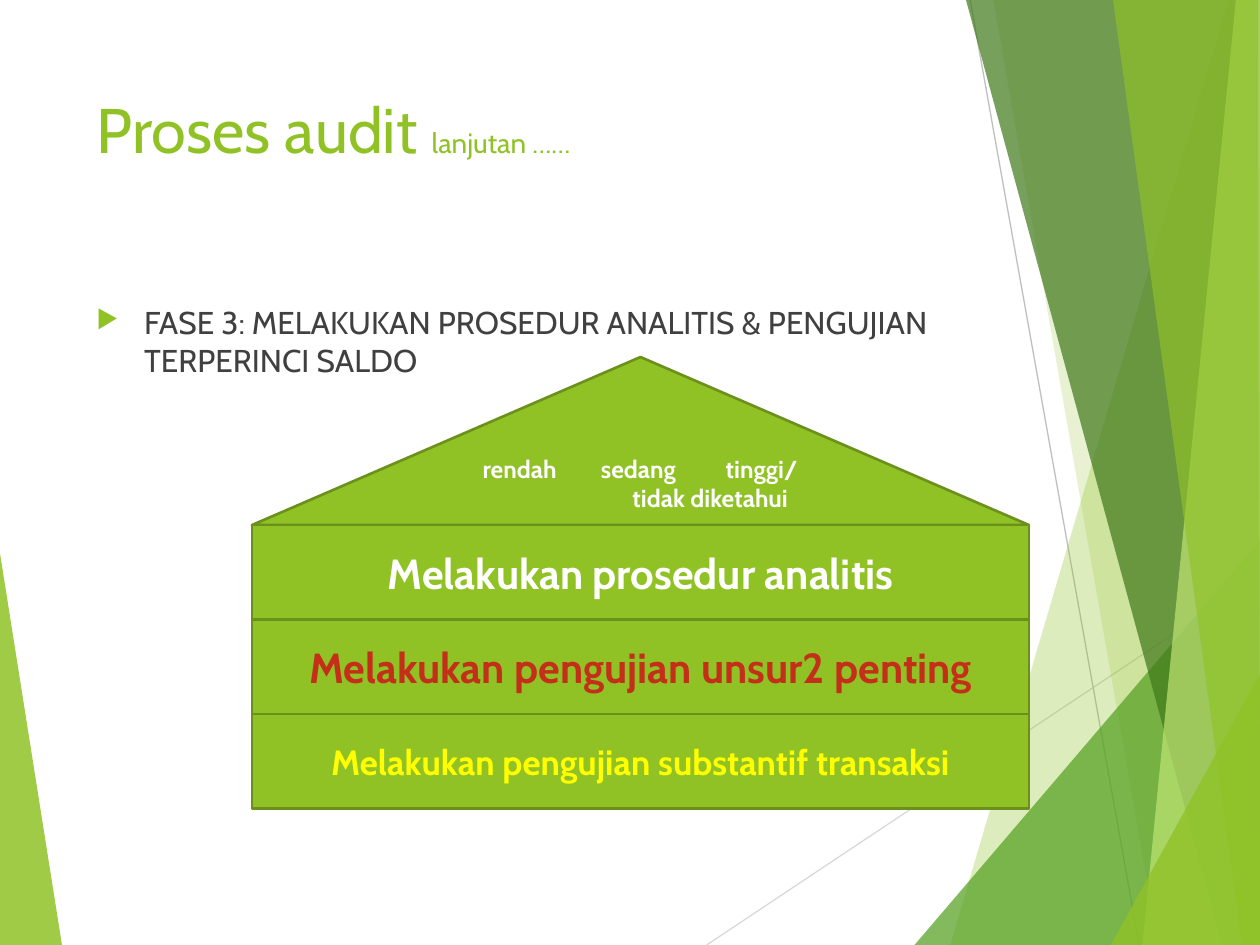
from collections import namedtuple

from lxml.etree import SubElement
from pptx import Presentation
from pptx.dml.color import RGBColor
from pptx.enum.shapes import MSO_CONNECTOR, MSO_SHAPE
from pptx.enum.text import MSO_ANCHOR, MSO_AUTO_SIZE, PP_ALIGN
from pptx.oxml.ns import qn
from pptx.util import Inches, Pt

Box = namedtuple("Box", "left top width height")

COLUMNS, ROWS = 120, 90
CELL = Inches(10) // COLUMNS
FONT = "Cabin"
LIME = RGBColor(0x90, 0xC2, 0x26)
OLIVE = RGBColor(0x6B, 0x90, 0x1C)
GREEN = RGBColor(0x54, 0xA0, 0x21)
FOREST = RGBColor(0x3F, 0x78, 0x19)
PALE = RGBColor(0xC0, 0xE4, 0x74)
GREY = RGBColor(0xBF, 0xBF, 0xBF)
SILVER = RGBColor(0xD9, 0xD9, 0xD9)
CHARCOAL = RGBColor(0x40, 0x40, 0x40)
WHITE = RGBColor(0xFF, 0xFF, 0xFF)
RED = RGBColor(0xC4, 0x2F, 0x1A)
YELLOW = RGBColor(0xFF, 0xFF, 0x00)

PAGE = Box(0, 0, COLUMNS, ROWS)
TITLE = Box(8, 8, 83.3, 17.3)
BODY = Box(8, 28.3, 83.3, 50.9)
HOUSE = Box(24, 34, 74, 43)

RAYS = [((67.3, 90), (120, 54.9), SILVER), ((92.4, 0), (108.5, 90), GREY)]
LEFT_FACET = ([(0, 52.7), (5.9, 90), (0, 90)], LIME, 85)
RIGHT_FACETS = [
    ([(117, 0), (90.5, 90), (120, 90), (120, 0)], LIME, 30),
    ([(94.6, 0), (110.3, 90), (120, 90), (120, 0)], LIME, 20),
    ([(87.1, 90), (120, 51.5), (120, 90)], GREEN, 72),
    ([(92, 0), (116.4, 90), (120, 90), (120, 0)], FOREST, 70),
    ([(117.7, 0), (108.8, 90), (120, 90), (120, 0)], PALE, 70),
    ([(106, 0), (118.3, 90), (120, 90), (119.8, 0)], LIME, 65),
    ([(105.8, 90), (120, 64.2), (120, 90)], LIME, 80),
]
FLOORS = [
    ("Melakukan prosedur analitis", 24, WHITE),
    ("Melakukan pengujian unsur2 penting", 24, RED),
    ("Melakukan pengujian substantif transaksi", 20, YELLOW),
]
ROOF_LINES = [
    ("\trendah\tsedang\ttinggi/", (0.19, 1.13, 2.12)),
    ("\ttidak diketahui", (1.38,)),
]


def cells(*counts):
    """Turn counts of grid cells into lengths."""
    return [round(count * CELL) for count in counts]


def add_span(para, text, size, color, bold=False):
    """Add one formatted run to a paragraph."""
    span = para.add_run()
    span.text = text
    span.font.name, span.font.size = FONT, Pt(size)
    span.font.bold, span.font.color.rgb = bold, color


def add_facet(page, box, points, color, opacity):
    """Draw one translucent polygon within the box."""
    corners = [cells(box.left + x, box.top + y) for x, y in points]
    builder = page.shapes.build_freeform(*corners[0], scale=1.0)
    builder.add_line_segments(corners[1:], close=True)
    facet = builder.convert_to_shape()
    facet.shadow.inherit = False
    facet.fill.solid()
    facet.fill.fore_color.rgb = color
    facet.line.fill.background()
    tint = facet._element.spPr.find(qn("a:solidFill"))[0]
    SubElement(tint, qn("a:alpha"), val=str(opacity * 1000))


def add_ray(page, box, start, end, color):
    """Draw one thin line within the box."""
    ends = [box.left + start[0], box.top + start[1], box.left + end[0], box.top + end[1]]
    ray = page.shapes.add_connector(MSO_CONNECTOR.STRAIGHT, *cells(*ends))
    ray.line.color.rgb, ray.line.width = color, Pt(0.75)
    SubElement(ray._element.spPr, qn("a:effectLst"))


def add_backdrop(page, box):
    """Place the facets and rays along the edges of the slide."""
    add_facet(page, box, *LEFT_FACET)
    for ray in RAYS:
        add_ray(page, box, *ray)
    for facet in RIGHT_FACETS:
        add_facet(page, box, *facet)


def add_title(page, box):
    """Move and fill the title placeholder."""
    title = page.shapes.title
    title.left, title.top, title.width, title.height = cells(*box)
    frame = title.text_frame
    frame.auto_size, frame.vertical_anchor = MSO_AUTO_SIZE.NONE, MSO_ANCHOR.TOP
    para = frame.paragraphs[0]
    para.alignment = PP_ALIGN.LEFT
    add_span(para, "Proses audit ", 36, LIME)
    add_span(para, "lanjutan ……", 16, LIME)


def add_body(page, box):
    """Place the bulleted phase heading."""
    frame = page.shapes.add_textbox(*cells(*box)).text_frame
    frame.word_wrap = True
    para = frame.paragraphs[0]
    para.space_before = Pt(10)
    add_span(para, "FASE 3: MELAKUKAN PROSEDUR ANALITIS & PENGUJIAN TERPERINCI SALDO", 18, CHARCOAL)
    props = para._p.get_or_add_pPr()
    props.set("marL", str(Inches(0.38)))
    props.set("indent", str(-Inches(0.38)))
    SubElement(SubElement(props, qn("a:buClr")), qn("a:srgbClr"), val=str(LIME))
    SubElement(props, qn("a:buSzPct"), val="80000")
    SubElement(props, qn("a:buChar"), char="▶")


def add_block(page, kind, box):
    """Draw one part of the house and return its text frame."""
    block = page.shapes.add_shape(kind, *cells(*box))
    block.shadow.inherit = False
    block.fill.solid()
    block.fill.fore_color.rgb = LIME
    block.line.color.rgb, block.line.width = OLIVE, Pt(1.5)
    frame = block.text_frame
    frame.word_wrap, frame.vertical_anchor = True, MSO_ANCHOR.MIDDLE
    return frame


def add_roof(page, box):
    """Draw the triangle with its risk levels set on tab stops."""
    frame = add_block(page, MSO_SHAPE.ISOSCELES_TRIANGLE, box)
    for index, (text, stops) in enumerate(ROOF_LINES):
        para = frame.add_paragraph() if index else frame.paragraphs[0]
        para.alignment = PP_ALIGN.LEFT
        tabs = SubElement(para._p.get_or_add_pPr(), qn("a:tabLst"))
        for stop in stops:
            SubElement(tabs, qn("a:tab"), pos=str(Inches(stop)), algn="l")
        add_span(para, text, 14, WHITE, True)


def add_house(page, box):
    """Stack the roof and the equal floors in the box."""
    floor_height = 9
    roof_height = box.height - floor_height * len(FLOORS)
    add_roof(page, box._replace(height=roof_height))
    for index, (text, size, color) in enumerate(FLOORS):
        top = box.top + roof_height + index * floor_height
        frame = add_block(page, MSO_SHAPE.RECTANGLE, box._replace(top=top, height=floor_height))
        para = frame.paragraphs[0]
        para.alignment = PP_ALIGN.CENTER
        add_span(para, text, size, color, True)


def main():
    """Build the slide and save the deck."""
    deck = Presentation()
    deck.slide_width, deck.slide_height = cells(COLUMNS, ROWS)
    page = deck.slides.add_slide(deck.slide_layouts[5])
    add_backdrop(page, PAGE)
    add_title(page, TITLE)
    add_body(page, BODY)
    add_house(page, HOUSE)
    deck.save("out.pptx")


if __name__ == "__main__":
    main()
